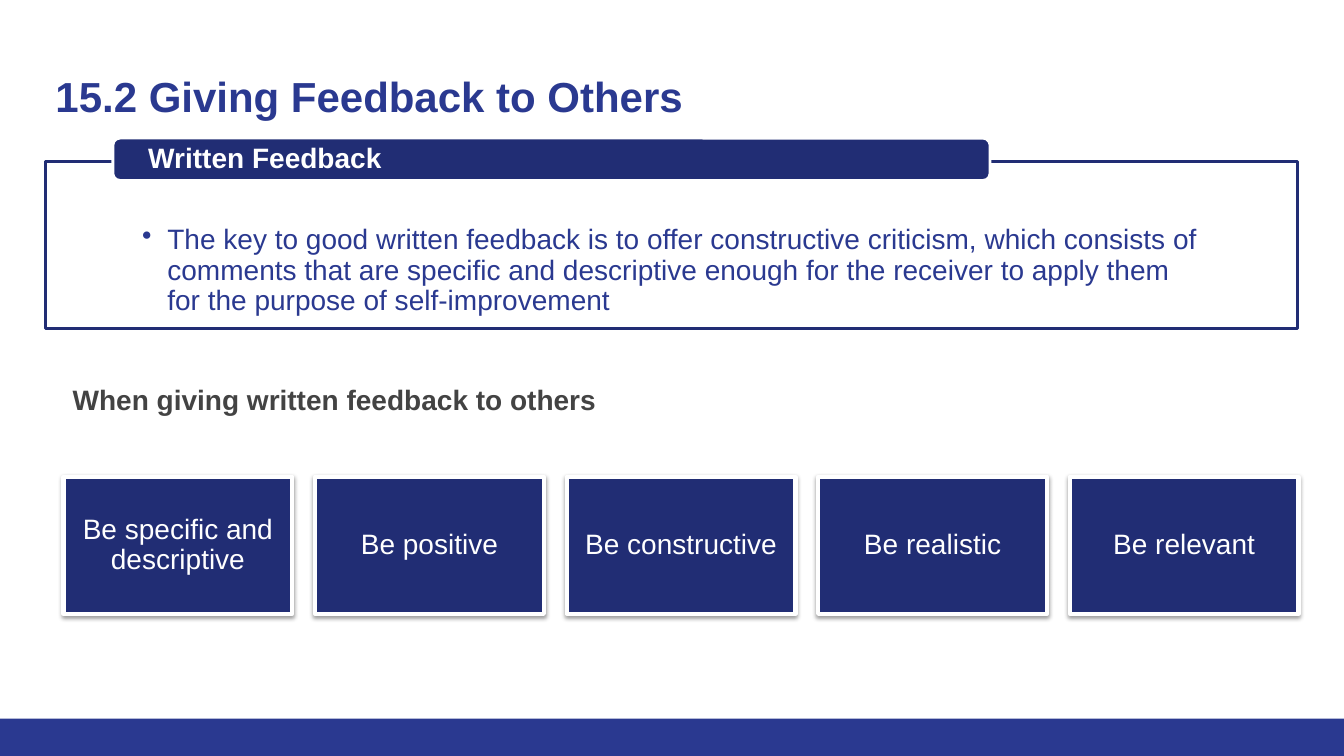
from lxml.etree import SubElement
from pptx import Presentation
from pptx.dml.color import RGBColor
from pptx.enum.shapes import MSO_SHAPE
from pptx.enum.text import MSO_ANCHOR, PP_ALIGN
from pptx.oxml.ns import qn
from pptx.util import Inches, Pt

BLUE = RGBColor(0x2A, 0x39, 0x90)
NAVY = RGBColor(0x21, 0x2D, 0x74)
GRAY = RGBColor(0x43, 0x43, 0x43)
WHITE = RGBColor(0xFF, 0xFF, 0xFF)

LEFT, WIDTH = 0.45, 12.42
FIRST_CARD, LAST_CARD = 0.63, 10.61
ADVICE = [
    "Be specific and descriptive",
    "Be positive",
    "Be constructive",
    "Be realistic",
    "Be relevant",
]


class FeedbackSlide:
    font_name = "Arial"

    def __init__(self, presentation):
        self.slide = presentation.slides.add_slide(presentation.slide_layouts[5])

    def set_text(self, shape, text, color, insets, size=20, bold=False,
                 anchor=MSO_ANCHOR.TOP, align=PP_ALIGN.LEFT, spacing=0.9, bullet=False):
        frame = shape.text_frame
        frame.text = text
        frame.word_wrap = True
        frame.vertical_anchor = anchor
        (frame.margin_left, frame.margin_top,
         frame.margin_right, frame.margin_bottom) = [Inches(inset) for inset in insets]
        paragraph = frame.paragraphs[0]
        paragraph.alignment = align
        paragraph.line_spacing = spacing
        if bullet:
            properties = paragraph._p.get_or_add_pPr()
            properties.set("marL", str(Inches(0.25)))
            properties.set("indent", str(-Inches(0.25)))
            SubElement(properties, qn("a:buChar"), char="•")
        font = paragraph.runs[0].font
        font.name = self.font_name
        font.size = Pt(size)
        font.bold = bold
        font.color.rgb = color

    def title(self, text, left, top, width, height):
        shape = self.slide.shapes.title
        shape.left, shape.top = Inches(left), Inches(top)
        shape.width, shape.height = Inches(width), Inches(height)
        self.set_text(shape, text, BLUE, [0.1] * 4, size=30, bold=True, spacing=1.0)

    def label(self, text, left, top, width, height, color, insets, **style):
        shape = self.slide.shapes.add_textbox(
            Inches(left), Inches(top), Inches(width), Inches(height))
        self.set_text(shape, text, color, insets, **style)

    def box(self, left, top, width, height, fill, line=None, line_width=2,
            kind=MSO_SHAPE.RECTANGLE):
        shape = self.slide.shapes.add_shape(
            kind, Inches(left), Inches(top), Inches(width), Inches(height))
        shape.shadow.inherit = False
        shape.fill.solid()
        shape.fill.fore_color.rgb = fill
        if line is None:
            shape.line.fill.background()
        else:
            shape.line.color.rgb = line
            shape.line.width = Pt(line_width)
        return shape

    def card(self, text, left, top, width, height):
        shape = self.box(left, top, width, height, NAVY, WHITE, line_width=3)
        effects = shape._element.spPr.find(qn("a:effectLst"))
        shadow = SubElement(effects, qn("a:outerShdw"), blurRad=str(Pt(3.1)),
                            dist=str(Pt(1.6)), dir="5400000", rotWithShape="0")
        color = SubElement(shadow, qn("a:srgbClr"), val="000000")
        SubElement(color, qn("a:alpha"), val="38000")
        self.set_text(shape, text, WHITE, [0.08] * 4,
                      anchor=MSO_ANCHOR.MIDDLE, align=PP_ALIGN.CENTER)


def main():
    presentation = Presentation()
    presentation.slide_width = Inches(13.33)
    presentation.slide_height = Inches(7.5)
    page = FeedbackSlide(presentation)

    page.box(0, 7.13, 13.33, 0.37, BLUE)
    page.title("15.2 Giving Feedback to Others", LEFT, 0.6, WIDTH, 0.89)

    panel = page.box(LEFT, 1.6, WIDTH, 1.66, WHITE, NAVY)
    page.set_text(
        panel,
        "The key to good written feedback is to offer constructive criticism, "
        "which consists of comments that are specific and descriptive enough "
        "for the receiver to apply them for the purpose of self-improvement",
        BLUE, [0.96, 0.64, 0.96, 0.16], bullet=True)
    heading = page.box(1.12, 1.37, 8.7, 0.42, NAVY, WHITE,
                       kind=MSO_SHAPE.ROUNDED_RECTANGLE)
    page.set_text(heading, "Written Feedback", WHITE, [0.33, 0, 0.33, 0],
                  bold=True, anchor=MSO_ANCHOR.MIDDLE)

    page.label("When giving written feedback to others", LEFT, 3.64, WIDTH, 0.89,
               GRAY, [0.27, 0.1, 0.1, 0.1], bold=True, spacing=1.15)

    pitch = (LAST_CARD - FIRST_CARD) / (len(ADVICE) - 1)
    for index, text in enumerate(ADVICE):
        page.card(text, FIRST_CARD + index * pitch, 4.73, 2.27, 1.36)

    presentation.save("out.pptx")


if __name__ == "__main__":
    main()
